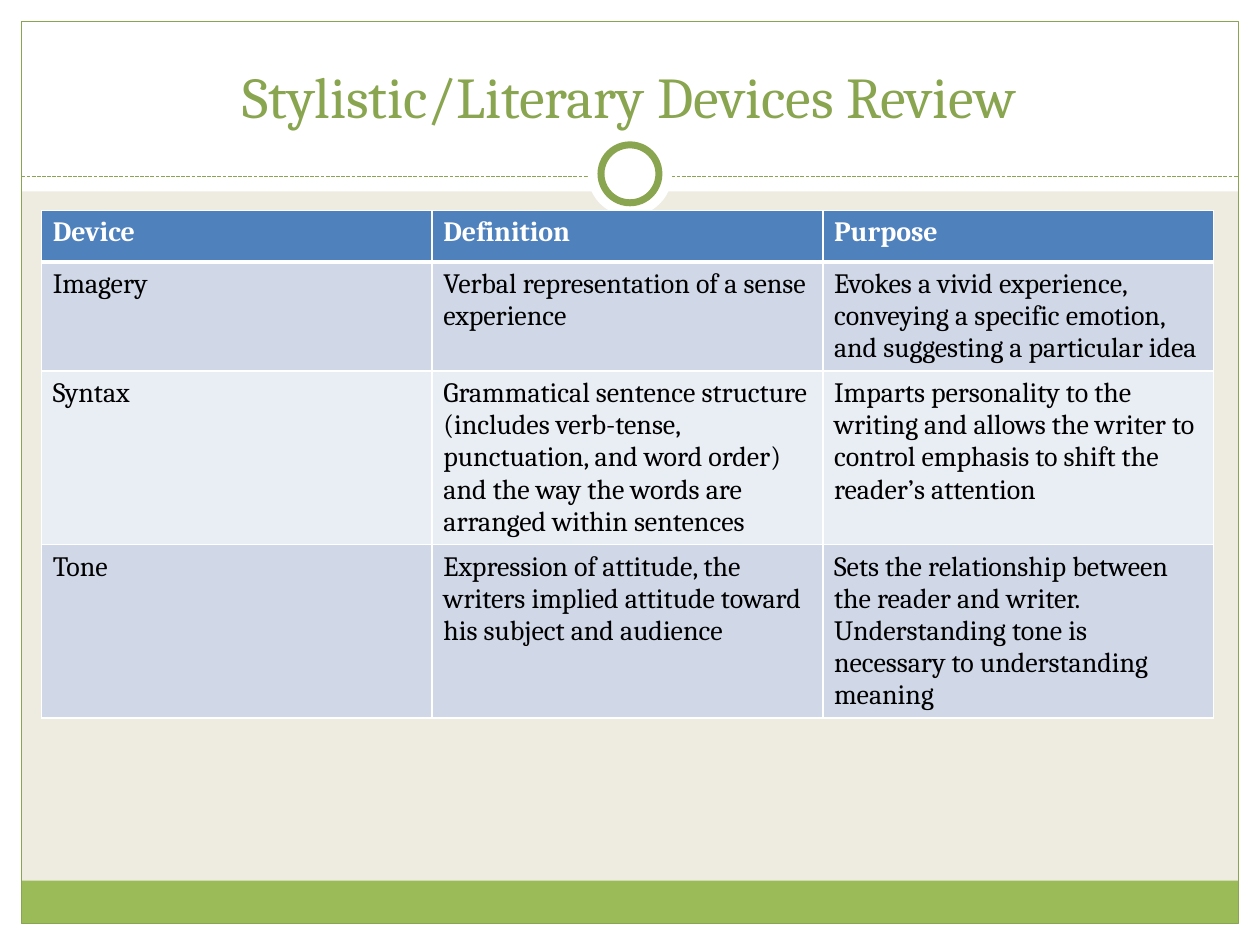
from lxml.etree import SubElement
from pptx import Presentation
from pptx.dml.color import RGBColor
from pptx.enum.dml import MSO_LINE
from pptx.enum.shapes import MSO_CONNECTOR, MSO_SHAPE
from pptx.enum.text import MSO_ANCHOR, PP_ALIGN
from pptx.oxml.ns import qn
from pptx.util import Inches, Pt

TITLE = "Stylistic/Literary Devices Review"
ROWS = [
    ("Device", "Definition", "Purpose"),
    ("Imagery", "Verbal representation of a sense experience",
     "Evokes a vivid experience, conveying a specific emotion, "
     "and suggesting a particular idea"),
    ("Syntax",
     "Grammatical sentence structure (includes verb-tense, punctuation, "
     "and word order) and the way the words are arranged within sentences",
     "Imparts personality to the writing and allows the writer to control "
     "emphasis to shift the reader’s attention"),
    ("Tone",
     "Expression of attitude, the writers implied attitude toward "
     "his subject and audience",
     "Sets the relationship between the reader and writer.  "
     "Understanding tone is necessary to understanding meaning"),
]
COLORS = {"back": "EEECE1", "white": "FFFFFF", "black": "000000",
          "green": "9BBB59", "olive": "89A54F", "head": "4F81BD",
          "odd": "D0D8E8", "even": "E9EDF4"}
FONT = "Cambria"
WIDE, HIGH, EDGE = 10, 7.5, 0.17
INNER = WIDE - 2 * EDGE
BAND, RULE = 1.52, 1.4
MID = (WIDE / 2, 1.38)
FOOT = 0.34


def color(name):
    return RGBColor.from_string(COLORS[name])


def write(frame, text, size=16, ink="black", bold=False, align=PP_ALIGN.LEFT):
    frame.word_wrap = True
    para = frame.paragraphs[0]
    para.alignment = align
    run = para.add_run()
    run.text = text
    font = run.font
    font.name, font.size, font.bold = FONT, Pt(size), bold
    font.color.rgb = color(ink)


def draw(slide, box, fill=None, line=None, width=0.75, kind=MSO_SHAPE.RECTANGLE):
    shape = slide.shapes.add_shape(kind, *map(Inches, box))
    shape.shadow.inherit = False
    if fill:
        shape.fill.solid()
        shape.fill.fore_color.rgb = color(fill)
    else:
        shape.fill.background()
    if line:
        shape.line.color.rgb = color(line)
        shape.line.width = Pt(width)
    else:
        shape.line.fill.background()


def disc(slide, size, **style):
    x, y = MID
    draw(slide, (x - size / 2, y - size / 2, size, size),
         kind=MSO_SHAPE.OVAL, **style)


def border(cell, **widths):
    """Give each named side (L, R, T, B) a white line of that many points."""
    props = cell._tc.get_or_add_tcPr()
    for side, width in widths.items():
        line = SubElement(props, qn(f"a:ln{side}"), w=str(Pt(width)))
        fill = SubElement(line, qn("a:solidFill"))
        SubElement(fill, qn("a:srgbClr"), val=COLORS["white"])


def frame(slide):
    back = slide.background.fill
    back.solid()
    back.fore_color.rgb = color("back")
    for box in [(0, HIGH - EDGE, WIDE, EDGE), (0, 0, WIDE, BAND),
                (0, 0, EDGE, HIGH), (WIDE - EDGE, 0, EDGE, HIGH)]:
        draw(slide, box, fill="white")
    draw(slide, (EDGE, HIGH - EDGE - FOOT, INNER, FOOT), fill="green")
    draw(slide, (EDGE, EDGE, INNER, HIGH - 2 * EDGE), line="olive")
    rule = slide.shapes.add_connector(
        MSO_CONNECTOR.STRAIGHT,
        *map(Inches, (EDGE, RULE, WIDE - EDGE, RULE)))
    rule.line.color.rgb = color("olive")
    rule.line.width = Pt(0.75)
    rule.line.dash_style = MSO_LINE.SQUARE_DOT
    SubElement(rule._element.spPr, qn("a:effectLst"))
    disc(slide, 0.67, fill="white")
    disc(slide, 0.46, fill="white", line="olive", width=4)


def head(slide):
    title = slide.shapes.title
    title.left, title.top, title.width, title.height = map(
        Inches, (0.33, 0.25, 9.33, 0.83))
    title.text_frame.vertical_anchor = MSO_ANCHOR.BOTTOM
    write(title.text_frame, TITLE, size=33, ink="olive", align=PP_ALIGN.CENTER)
    # Bring the title in front of the white band
    title.element.getparent().append(title.element)


def grid(slide):
    high = 0.41
    table = slide.shapes.add_table(
        len(ROWS), len(ROWS[0]),
        *map(Inches, (0.33, 1.67, 9.3, high * len(ROWS)))).table
    table.horz_banding = False
    for r, texts in enumerate(ROWS):
        top = r == 0
        shade = "head" if top else "odd" if r % 2 else "even"
        for c, text in enumerate(texts):
            cell = table.cell(r, c)
            cell.margin_left = cell.margin_right = Inches(0.09)
            cell.margin_top = cell.margin_bottom = Inches(0.05)
            border(cell, L=1, R=1, T=3 if r == 1 else 1, B=3 if top else 1)
            cell.fill.solid()
            cell.fill.fore_color.rgb = color(shade)
            write(cell.text_frame, text, bold=top,
                  ink="white" if top else "black")


def main():
    deck = Presentation()
    deck.slide_width, deck.slide_height = Inches(WIDE), Inches(HIGH)
    slide = deck.slides.add_slide(deck.slide_layouts[5])
    frame(slide)
    head(slide)
    grid(slide)
    deck.save("out.pptx")


if __name__ == "__main__":
    main()
